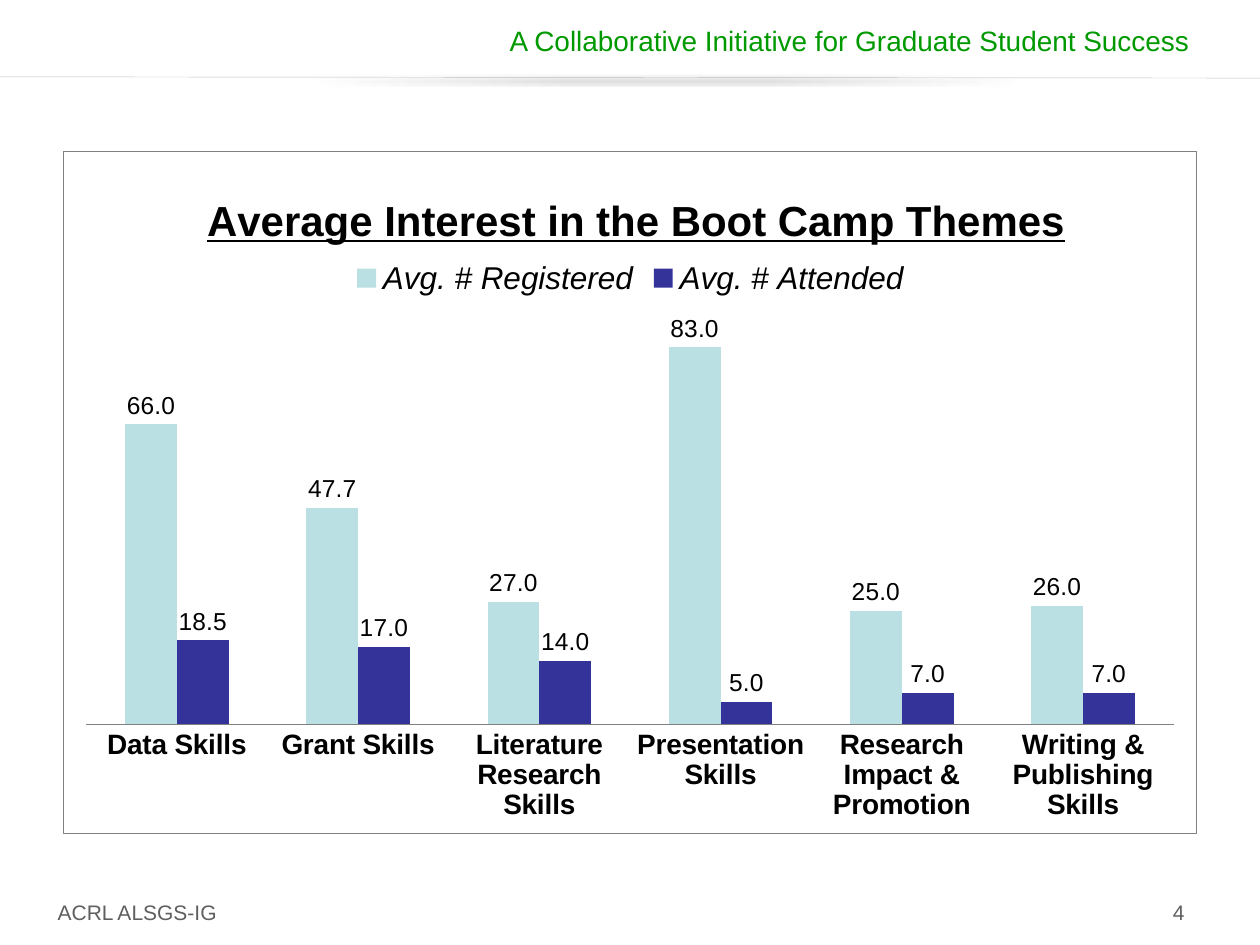
from lxml.etree import SubElement as Sub
from pptx import Presentation
from pptx.chart.data import CategoryChartData as Data
from pptx.dml.color import RGBColor as RGB
from pptx.enum.chart import XL_CHART_TYPE as Kind, XL_LABEL_POSITION as Spot
from pptx.enum.chart import XL_LEGEND_POSITION as Side, XL_TICK_MARK as Tick
from pptx.enum.shapes import MSO_CONNECTOR as Line
from pptx.enum.text import PP_ALIGN as Align
from pptx.oxml import parse_xml
from pptx.oxml.ns import nsdecls, qn
from pptx.util import Inches, Pt

# Content
HUE = {"head": "009900", "foot": "5F5F5F", "rule": "BFBFBF", "edge": "808080",
       "ink": "000000", "reg": "BBE0E3", "att": "333399"}
TITLE = "Average Interest in the Boot Camp Themes"
CATS = ["Data Skills", "Grant Skills", "Literature Research Skills",
        "Presentation Skills", "Research Impact & Promotion",
        "Writing & Publishing Skills"]
ROWS = [("Avg. # Registered", "reg", (66, 47.7, 27, 83, 25, 26)),
        ("Avg. # Attended", "att", (18.5, 17, 14, 5, 7, 7))]
# Text, box in inches, size, colour, alignment, wrap
NOTES = [
    ("A Collaborative Initiative for Graduate Student Success",
     (3.88, 0.14, 5.66, 0.37), 16, "head", Align.RIGHT, False),
    ("ACRL ALSGS-IG", (0.36, 7.09, 1.5, 0.3), 12, "foot", Align.LEFT, True),
    ("4", (7.17, 7.09, 2.33, 0.26), 12, "foot", Align.RIGHT, True),
]
FONTS = {
    "base": {"size": Pt(10)},
    "title": {"size": Pt(24), "bold": True, "underline": True},
    "key": {"size": Pt(18), "italic": True},
    "cat": {"size": Pt(16), "bold": True},
    "label": {"size": Pt(14)},
}


def tint(hue):
    return RGB.from_string(HUE[hue])


def style(font, hue="ink", **look):
    for name, val in {"name": "Arial", **look}.items():
        setattr(font, name, val)
    font.color.rgb = tint(hue)


def place(part, pos, **share):
    """Set the layout of a chart part, as shares of the chart's size."""
    for old in part.findall(qn("c:layout")):
        part.remove(old)
    lay = parse_xml(f"<c:layout {nsdecls('c')}><c:manualLayout/></c:layout>")
    inner = {"layoutTarget": "inner"} if "w" in share else {}
    modes = {"xMode": "edge", "yMode": "edge"}
    for tag, val in {**inner, **modes, **share}.items():
        Sub(lay[0], qn(f"c:{tag}")).set("val", str(val))
    part.insert(pos, lay)


prs = Presentation()
prs.slide_width, prs.slide_height = Inches(10), Inches(7.5)
slide = prs.slides.add_slide(prs.slide_layouts[6])
shapes = slide.shapes

# Header rule with its soft shadow
rule = shapes.add_connector(Line.STRAIGHT, 0, Inches(0.61), Inches(10), Inches(0.62))
rule.line.color.rgb, rule.line.width = tint("rule"), Pt(0.25)
rule._element.spPr.append(parse_xml(
    f'<a:effectLst {nsdecls("a")}><a:outerShdw blurRad="{Pt(3.1)}" '
    f'dist="{Pt(1.6)}" dir="5400000" rotWithShape="0"><a:srgbClr val="{HUE["ink"]}">'
    '<a:alpha val="38000"/></a:srgbClr></a:outerShdw></a:effectLst>'))

# Header and footer text
for text, box, size, hue, align, wrap in NOTES:
    frame = shapes.add_textbox(*map(Inches, box)).text_frame
    frame.word_wrap = wrap
    para = frame.paragraphs[0]
    para.text, para.alignment = text, align
    style(para.runs[0].font, hue, size=Pt(size))

# Chart
data = Data(number_format="0.0")
data.categories = CATS
for name, _, vals in ROWS:
    data.add_series(name, vals)
chart = shapes.add_chart(Kind.COLUMN_CLUSTERED, *map(Inches, (0.5, 1.2, 9, 5.42)),
                         data).chart
style(chart.font, **FONTS["base"])
root = chart._chartSpace
root.chart.addnext(parse_xml(
    f'<c:spPr {nsdecls("c", "a")}><a:noFill/><a:ln w="{Pt(0.75)}"><a:solidFill>'
    f'<a:srgbClr val="{HUE["edge"]}"/></a:solidFill></a:ln></c:spPr>'))

# Title and legend
chart.has_title = chart.has_legend = True
head = chart.chart_title.text_frame
head.text = TITLE
style(head.paragraphs[0].runs[0].font, **FONTS["title"])
key = chart.legend
key.position, key.include_in_layout = Side.TOP, False
style(key.font, **FONTS["key"])

# Axes
cat, val = chart.category_axis, chart.value_axis
cat.major_tick_mark = cat.minor_tick_mark = Tick.NONE
cat.format.line.color.rgb = tint("edge")
style(cat.tick_labels.font, **FONTS["cat"])
val.visible = val.has_major_gridlines = False
val.minimum_scale, val.maximum_scale = 0, 90

# Bars and their values
plot = chart.plots[0]
plot.gap_width, plot.overlap, plot.vary_by_categories = 150, 0, False
for bar, (_, hue, _) in zip(plot.series, ROWS):
    bar.format.fill.solid()
    bar.format.fill.fore_color.rgb = tint(hue)
    tags = bar.data_labels
    tags.show_value, tags.position = True, Spot.OUTSIDE_END
    tags.number_format, tags.number_format_is_linked = "0.0", False
    style(tags.font, **FONTS["label"])

# Places inside the chart
place(root.chart.plotArea, 0, x=0.02, y=0.24, w=0.96, h=0.6)
place(chart.chart_title._element, 1, x=0.12, y=0.05)
place(key._element, 1, x=0.25, y=0.15)

prs.save("out.pptx")
